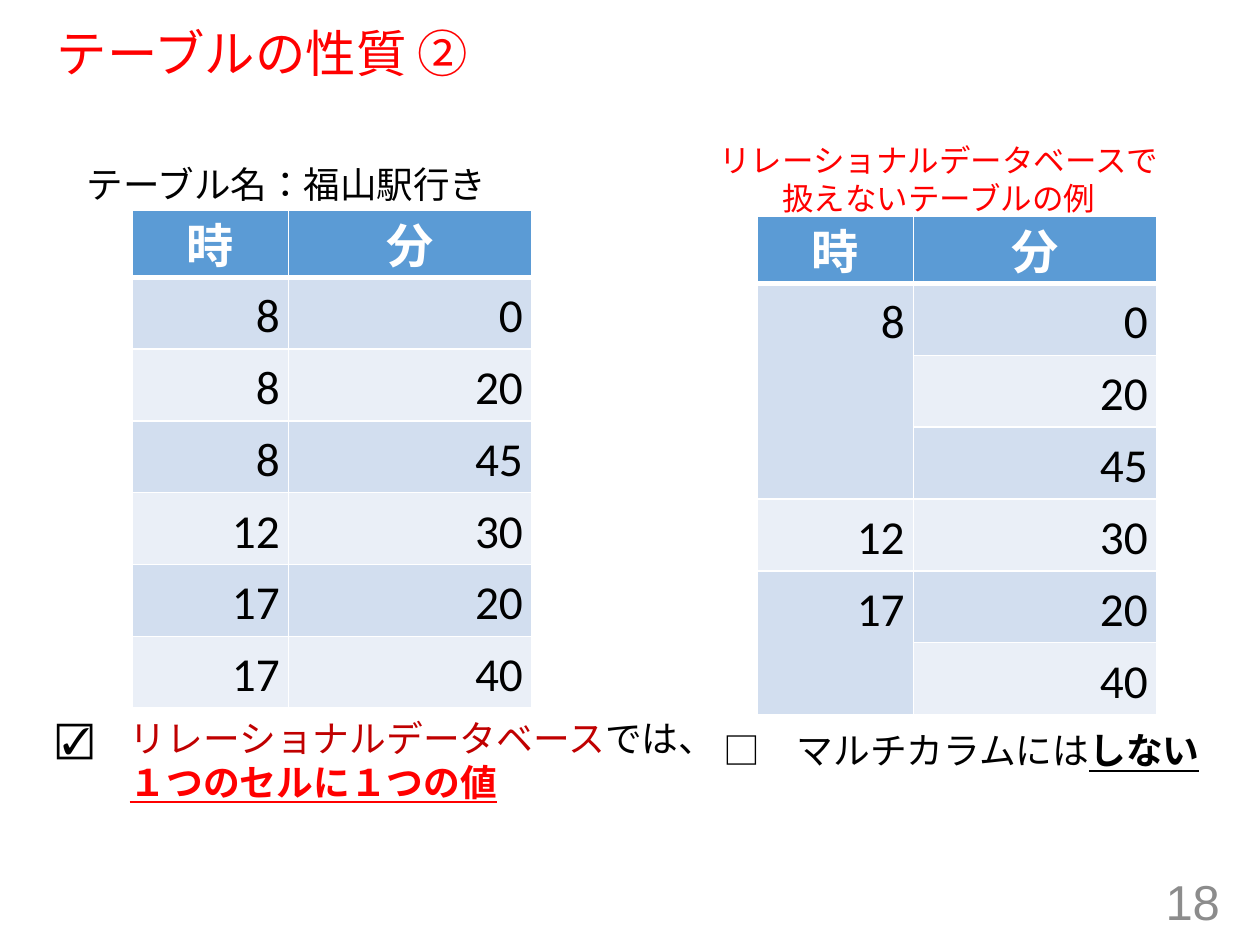
from pptx import Presentation
from pptx.dml.color import RGBColor
from pptx.enum.lang import MSO_LANGUAGE_ID as Language
from pptx.enum.text import MSO_ANCHOR as Anchor, MSO_AUTO_SIZE as AutoSize, PP_ALIGN as Align
from pptx.oxml import parse_xml
from pptx.oxml.ns import nsdecls, qn
from pptx.util import Inches, Pt
from lxml.etree import SubElement

RED = RGBColor(0xFF, 0x00, 0x00)
DARK_RED = RGBColor(0xC0, 0x00, 0x00)
BLACK = RGBColor(0x00, 0x00, 0x00)
WHITE = RGBColor(0xFF, 0xFF, 0xFF)
GRAY = RGBColor(0x8C, 0x8C, 0x8C)
HEADER_BLUE = RGBColor(0x5B, 0x9B, 0xD5)
BANDS = [RGBColor(0xD2, 0xDE, 0xEF), RGBColor(0xEA, 0xEF, 0xF7)]
JAPANESE = "Noto Sans CJK JP"


def add_span(para, text, size, font, color, strong=False, underline=False):
    span = para.add_run()
    span.text = text
    span.font.size = Pt(size)
    span.font.name = font
    span.font.color.rgb = color
    span.font.bold = strong
    span.font.underline = underline
    span.font.language_id = Language.JAPANESE
    if font == JAPANESE:
        SubElement(span.font._element, qn("a:ea")).set("typeface", font)


def place(shape, left, top, width, height):
    shape.left, shape.top = Inches(left), Inches(top)
    shape.width, shape.height = Inches(width), Inches(height)


deck = Presentation()
deck.slide_width, deck.slide_height = Inches(10), Inches(7.5)
page = deck.slides.add_slide(deck.slide_layouts[1])

title = page.shapes.title
place(title, 0.35, 0.19, 9.25, 0.51)
title.text_frame.auto_size = AutoSize.NONE
title.text_frame.vertical_anchor = Anchor.MIDDLE
para = title.text_frame.paragraphs[0]
para.alignment = Align.LEFT
para.line_spacing = 0.9
add_span(para, "テーブルの性質 ②", 28.8, "Arial", RED)

caption = page.placeholders[1]
place(caption, 0.62, 1.34, 3.57, 0.57)
frame = caption.text_frame
frame.auto_size = AutoSize.NONE
frame.margin_left = frame.margin_right = Inches(0.07)
frame.margin_top = frame.margin_bottom = Inches(0.04)
para = frame.paragraphs[0]
para.line_spacing = 0.7
para.space_before = Pt(10)
properties = para._p.get_or_add_pPr()
properties.set("marL", "0")
properties.set("indent", "0")
SubElement(properties, qn("a:buNone"))
add_span(para, "テーブル名：福山駅行き", 20.9, JAPANESE, BLACK)

timetable = [("時", "分"), (8, 0), (8, 20), (8, 45), (12, 30), (17, 20), (17, 40)]
for left, top, merges in [(1.05, 1.67, []), (6.01, 1.72, [(1, 3), (5, 6)])]:
    table = page.shapes.add_table(7, 2, Inches(left), Inches(top), Inches(3.17), Inches(3.95)).table
    table.columns[0].width, table.columns[1].width = Inches(1.24), Inches(1.93)
    for first, last in merges:
        table.cell(first, 0).merge(table.cell(last, 0))
    for row, values in enumerate(timetable):
        table.rows[row].height = Inches(0.57 if row else 0.53)
        for column, value in enumerate(values):
            cell = table.cell(row, column)
            cell.margin_left = cell.margin_right = Inches(0.07)
            cell.margin_top = Inches(0.04 if row else 0.11)
            cell.margin_bottom = Inches(0.03 if row else 0)
            cell.fill.solid()
            cell.fill.fore_color.rgb = BANDS[(row - 1) % 2] if row else HEADER_BLUE
            if row == 0:
                cell._tc.get_or_add_tcPr().insert(0, parse_xml(
                    f'<a:lnB {nsdecls("a")} w="{Pt(3)}"><a:solidFill>'
                    f'<a:srgbClr val="{WHITE}"/></a:solidFill></a:lnB>'))
            if cell.is_spanned:
                continue
            para = cell.text_frame.paragraphs[0]
            para.alignment = Align.RIGHT if row else Align.CENTER
            para.line_spacing = Pt(36 if row else 30)
            add_span(para, str(value), 27, "Calibri", BLACK if row else WHITE, row == 0)

notes = [
    ((5.58, 1.07, 3.74, 0.71), Align.CENTER, 18, "Calibri",
     [[("リレーショナルデータベースで", RED)], [("扱えないテーブルの例", RED)]]),
    ((0.35, 5.63, 5.46, 0.81), Align.LEFT, 21, JAPANESE,
     [[("☑　", BLACK), ("リレーショナルデータベース", DARK_RED), ("では、", BLACK)],
      [("１つのセルに１つの値", RED, True, True)]]),
    ((5.64, 5.73, 4.03, 0.45), Align.LEFT, 21, JAPANESE,
     [[("□　マルチカラムには", BLACK), ("しない", BLACK, True, True)]]),
    ((7.53, 6.95, 2.25, 0.4), Align.RIGHT, 28, "Arial", [[("18", GRAY)]]),
]
for position, alignment, size, font, lines in notes:
    box = page.shapes.add_textbox(*[Inches(length) for length in position])
    frame = box.text_frame
    frame.word_wrap = font == "Arial"
    frame.vertical_anchor = Anchor.MIDDLE if font == "Arial" else Anchor.TOP
    for index, pieces in enumerate(lines):
        para = frame.add_paragraph() if index else frame.paragraphs[0]
        para.alignment = alignment
        if index and alignment == Align.LEFT:
            para._p.get_or_add_pPr().set("marL", str(Inches(0.58)))
        for text, *style in pieces:
            add_span(para, text, size, font, *style)

deck.save("out.pptx")
